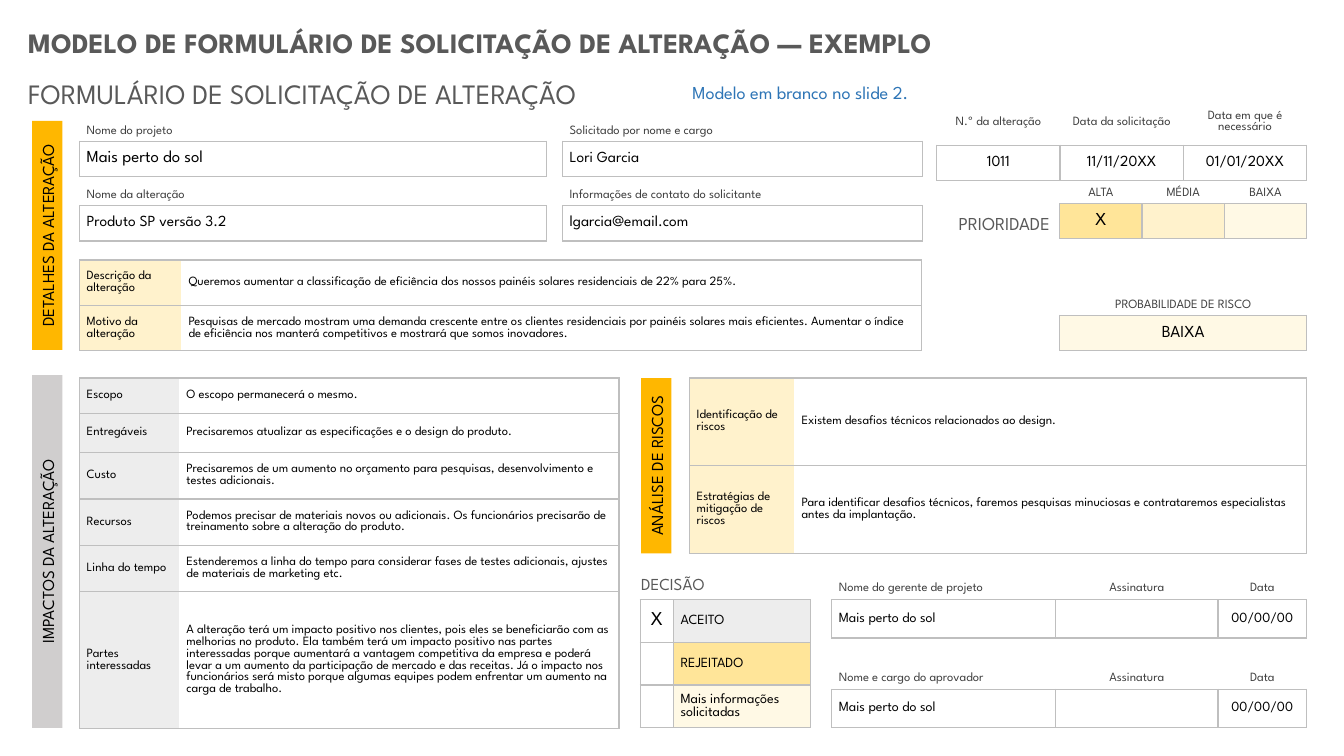
from lxml.etree import SubElement
from pptx import Presentation
from pptx.dml.color import RGBColor
from pptx.enum.shapes import MSO_SHAPE
from pptx.enum.text import MSO_ANCHOR, PP_ALIGN
from pptx.oxml.ns import qn
from pptx.util import Inches, Pt

FONT = "League Spartan"
BLACK = RGBColor(0x00, 0x00, 0x00)
WHITE = RGBColor(0xFF, 0xFF, 0xFF)
HEADING_GRAY = RGBColor(0x59, 0x59, 0x59)
LABEL_GRAY = RGBColor(0x40, 0x40, 0x40)
BORDER_GRAY = RGBColor(0xBF, 0xBF, 0xBF)
BAR_GRAY = RGBColor(0xD0, 0xCE, 0xCE)
LIGHT_GRAY = RGBColor(0xED, 0xED, 0xED)
BLUE = RGBColor(0x2E, 0x75, 0xB6)
AMBER = RGBColor(0xFF, 0xB7, 0x00)
YELLOW = RGBColor(0xFF, 0xE5, 0x99)
PALE_YELLOW = RGBColor(0xFF, 0xF2, 0xCC)
CREAM = RGBColor(0xFF, 0xF9, 0xE5)
LEFT, CENTER, RIGHT = PP_ALIGN.LEFT, PP_ALIGN.CENTER, PP_ALIGN.RIGHT


def write(text_frame, text, size, color, align=LEFT, bold=False):
    """Fill the first paragraph of a text frame and return it."""
    paragraph = text_frame.paragraphs[0]
    paragraph.text = text
    paragraph.alignment = align
    paragraph.font.name = FONT
    paragraph.font.size = Pt(size)
    paragraph.font.bold = bold
    paragraph.font.color.rgb = color
    return paragraph


def add_text(slide, box, text, size, color=HEADING_GRAY, align=LEFT, bold=False, spacing=1.15):
    """Add a wrapped text box at (left, top, width, height)."""
    shape = slide.shapes.add_textbox(*map(Inches, box))
    shape.text_frame.word_wrap = True
    paragraph = write(shape.text_frame, text, size, color, align, bold)
    paragraph.line_spacing = spacing


def add_section_bar(slide, left, top, length, text, fill):
    """Add a vertical section bar whose text reads upwards."""
    thickness = 0.3
    offset = (length - thickness) / 2
    shape = slide.shapes.add_shape(MSO_SHAPE.RECTANGLE, Inches(left - offset), Inches(top + offset),
                                   Inches(length), Inches(thickness))
    shape.rotation = 270
    shape.shadow.inherit = False
    shape.fill.solid()
    shape.fill.fore_color.rgb = fill
    shape.line.fill.background()
    shape.text_frame.vertical_anchor = MSO_ANCHOR.MIDDLE
    write(shape.text_frame, text, 12, BLACK, CENTER)


def add_grid(slide, left, top, widths, heights):
    """Add an unbanded table with the given column widths and row heights."""
    frame = slide.shapes.add_table(len(heights), len(widths), Inches(left), Inches(top),
                                   Inches(sum(widths)), Inches(sum(heights)))
    table = frame.table
    table.first_row = False
    table.horz_banding = False
    for column, width in zip(table.columns, widths):
        column.width = Inches(width)
    for row, height in zip(table.rows, heights):
        row.height = Inches(height)
    return table


def set_borders(cell, sides):
    """Draw gray borders on the listed sides and clear the others."""
    properties = cell._tc.get_or_add_tcPr()
    for side in "LRTB":
        line = SubElement(properties, qn(f"a:ln{side}"), w=str(Pt(1)))
        if side in sides:
            fill = SubElement(line, qn("a:solidFill"))
            SubElement(fill, qn("a:srgbClr"), val=str(BORDER_GRAY))
        else:
            SubElement(line, qn("a:noFill"))


def fill_cell(cell, text, size, fill=None, color=BLACK, align=LEFT, sides="LRTB", bottom=0):
    """Style one table cell and write its text."""
    set_borders(cell, sides)
    if fill is None:
        cell.fill.background()
    else:
        cell.fill.solid()
        cell.fill.fore_color.rgb = fill
    cell.margin_left = cell.margin_right = Inches(0.07)
    cell.margin_top = 0
    cell.margin_bottom = Inches(bottom)
    cell.vertical_anchor = MSO_ANCHOR.MIDDLE
    write(cell.text_frame, text, size, color, align)


def add_fields(slide, left, top, fields, size, heights=(0.2, 0.35), bottom=0):
    """Add labelled boxes from (width, label, value, fill, label align, value align)."""
    table = add_grid(slide, left, top, [field[0] for field in fields], heights)
    for index, (_, label, value, fill, align) in enumerate(fields):
        fill_cell(table.cell(0, index), label, 9, None, LABEL_GRAY, align, "B", bottom)
        fill_cell(table.cell(1, index), value, size, fill, BLACK, align)


def add_details(slide, left, top, widths, rows, label_fill):
    """Add a table of shaded labels and texts from (height, label, text)."""
    table = add_grid(slide, left, top, widths, [row[0] for row in rows])
    for index, (_, label, text) in enumerate(rows):
        fill_cell(table.cell(index, 0), label, 9, label_fill, sides="LTB")
        fill_cell(table.cell(index, 1), text, 9, WHITE, sides="RTB")


def add_decision(slide):
    """Add the decision options with their check column."""
    options = [("X", "ACEITO", LIGHT_GRAY), ("", "REJEITADO", YELLOW),
               ("", "Mais informações solicitadas", CREAM)]
    table = add_grid(slide, 6.35, 5.95, (0.33, 1.36), [1.27 / 3] * 3)
    for index, (mark, option, fill) in enumerate(options):
        fill_cell(table.cell(index, 0), mark, 14, WHITE, align=CENTER)
        fill_cell(table.cell(index, 1), option, 10, fill)


def add_headings(slide):
    """Add the titles and free-standing captions."""
    add_text(slide, (0.18, 0.2, 10.01, 0.44),
             "MODELO DE FORMULÁRIO DE SOLICITAÇÃO DE ALTERAÇÃO — EXEMPLO", 20, bold=True, spacing=1)
    add_text(slide, (6.77, 0.76, 5.4, 0.32), "Modelo em branco no slide 2.", 13, BLUE, spacing=1)
    add_text(slide, (0.18, 0.66, 8.16, 0.45), "FORMULÁRIO DE SOLICITAÇÃO DE ALTERAÇÃO", 20)
    add_text(slide, (9.15, 2.02, 1.36, 0.33), "PRIORIDADE", 13, align=RIGHT)
    add_text(slide, (6.26, 5.61, 1.64, 0.31), "DECISÃO", 12)


def add_request(slide):
    """Add the change request fields, priority and risk probability."""
    for left, top, width, label, value, size in [
        (0.79, 1.2, 4.63, "Nome do projeto", "Mais perto do sol", 12),
        (0.79, 1.84, 4.63, "Nome da alteração", "Produto SP versão 3.2", 11),
        (5.58, 1.2, 3.57, "Solicitado por nome e cargo", "Lori Garcia", 11),
        (5.58, 1.84, 3.57, "Informações de contato do solicitante", "lgarcia@email.com", 11),
    ]:
        add_fields(slide, left, top, [(width, label, value, WHITE, LEFT)], size)
    dates = [("N.º da alteração", "1011"), ("Data da solicitação", "11/11/20XX"),
             ("Data em que é necessário", "01/01/20XX")]
    add_fields(slide, 9.29, 1.06, [(3.67 / 3, *date, WHITE, CENTER) for date in dates], 11,
               (0.34, 0.35), 0.08)
    priorities = [("ALTA", "X", YELLOW), ("MÉDIA", "", PALE_YELLOW), ("BAIXA", "", CREAM)]
    add_fields(slide, 10.51, 1.82, [(2.45 / 3, *priority, CENTER) for priority in priorities], 13)
    add_fields(slide, 10.51, 2.93, [(2.45, "PROBABILIDADE DE RISCO", "BAIXA", CREAM, CENTER)], 12)
    add_details(slide, 0.79, 2.58, (1.01, 7.34), [
        (0.45, "Descrição da alteração", "Queremos aumentar a classificação de eficiência dos nossos "
         "painéis solares residenciais de 22% para 25%."),
        (0.45, "Motivo da alteração", "Pesquisas de mercado mostram uma demanda crescente entre os "
         "clientes residenciais por painéis solares mais eficientes. Aumentar o índice de eficiência "
         "nos manterá competitivos e mostrará que somos inovadores."),
    ], PALE_YELLOW)


def add_analysis(slide):
    """Add the impact and risk tables."""
    add_details(slide, 0.79, 3.75, (0.99, 4.36), [
        (0.35, "Escopo", "O escopo permanecerá o mesmo."),
        (0.39, "Entregáveis", "Precisaremos atualizar as especificações e o design do produto."),
        (0.46, "Custo", "Precisaremos de um aumento no orçamento para pesquisas, desenvolvimento e "
         "testes adicionais."),
        (0.46, "Recursos", "Podemos precisar de materiais novos ou adicionais. Os funcionários "
         "precisarão de treinamento sobre a alteração do produto."),
        (0.46, "Linha do tempo", "Estenderemos a linha do tempo para considerar fases de testes "
         "adicionais, ajustes de materiais de marketing etc."),
        (1.36, "Partes interessadas", "A alteração terá um impacto positivo nos clientes, pois eles "
         "se beneficiarão com as melhorias no produto. Ela também terá um impacto positivo nas partes "
         "interessadas porque aumentará a vantagem competitiva da empresa e poderá levar a um aumento "
         "da participação de mercado e das receitas. Já o impacto nos funcionários será misto porque "
         "algumas equipes podem enfrentar um aumento na carga de trabalho."),
    ], LIGHT_GRAY)
    add_details(slide, 6.84, 3.75, (1.04, 5.08), [
        (0.87, "Identificação de riscos", "Existem desafios técnicos relacionados ao design."),
        (0.87, "Estratégias de mitigação de riscos", "Para identificar desafios técnicos, faremos "
         "pesquisas minuciosas e contrataremos especialistas antes da implantação."),
    ], PALE_YELLOW)


def main():
    """Build the change request form and save it."""
    presentation = Presentation()
    presentation.slide_width = Inches(13.33)
    presentation.slide_height = Inches(7.5)
    slide = presentation.slides.add_slide(presentation.slide_layouts[6])
    add_headings(slide)
    add_section_bar(slide, 0.32, 1.2, 2.27, "DETALHES DA ALTERAÇÃO", AMBER)
    add_section_bar(slide, 0.32, 3.72, 3.5, "IMPACTOS DA ALTERAÇÃO", BAR_GRAY)
    add_section_bar(slide, 6.36, 3.75, 1.74, "ANÁLISE DE RISCOS", AMBER)
    add_request(slide)
    add_analysis(slide)
    add_decision(slide)
    for top, label in [(5.73, "Nome do gerente de projeto"), (6.62, "Nome e cargo do aprovador")]:
        add_fields(slide, 8.25, top, [
            (2.22, label, "Mais perto do sol", WHITE, LEFT),
            (1.61, "Assinatura", "", WHITE, CENTER),
            (0.88, "Data", "00/00/00", WHITE, CENTER),
        ], 10, (0.22, 0.38))
    presentation.save("out.pptx")


if __name__ == "__main__":
    main()
